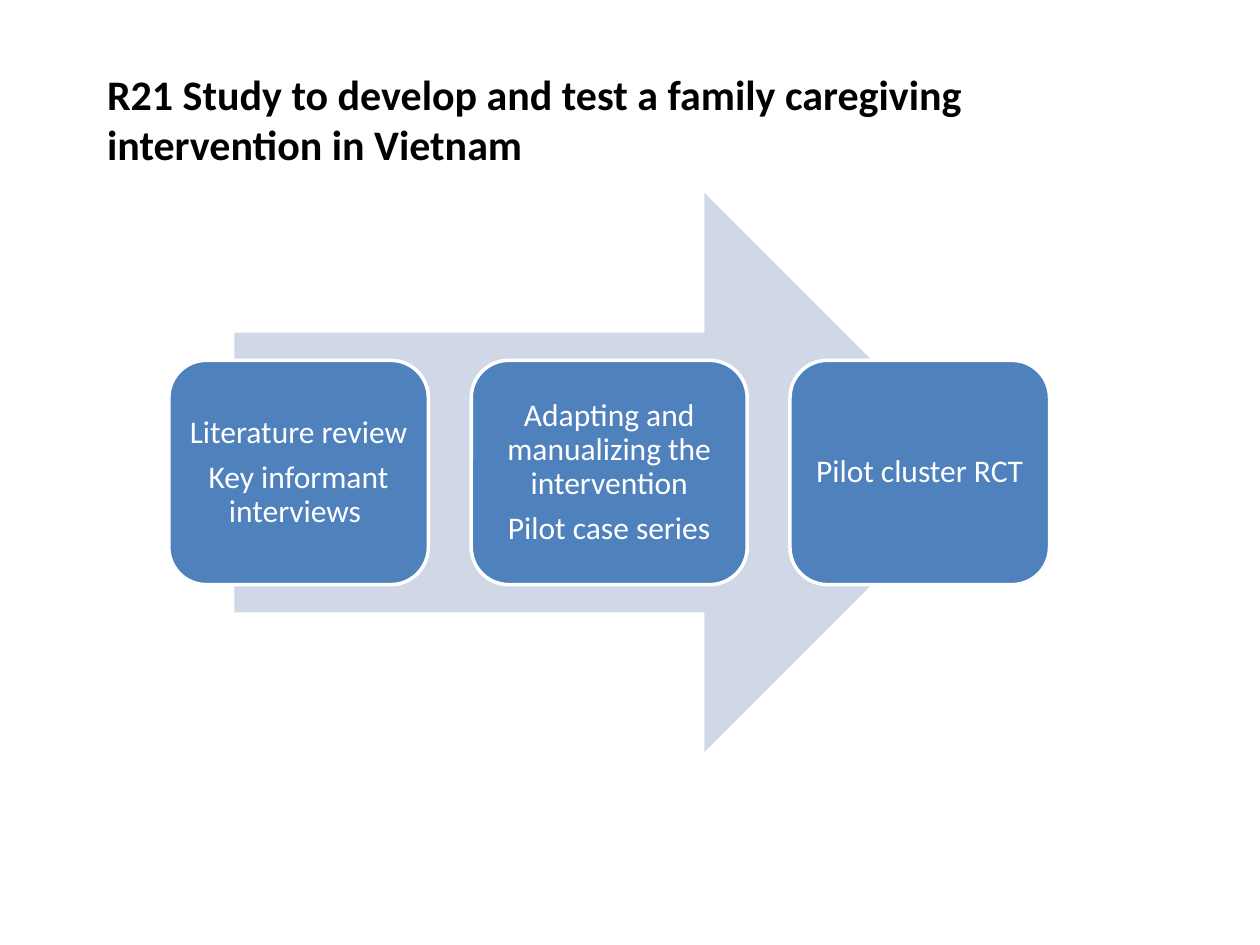
from dataclasses import dataclass

from pptx import Presentation
from pptx.dml.color import RGBColor
from pptx.enum.shapes import MSO_SHAPE
from pptx.enum.text import MSO_ANCHOR, PP_ALIGN
from pptx.util import Inches, Pt

BLACK = RGBColor(0x00, 0x00, 0x00)
WHITE = RGBColor(0xFF, 0xFF, 0xFF)
BLUE = RGBColor(0x4F, 0x81, 0xBD)
PALE_BLUE = RGBColor(0xD0, 0xD8, 0xE8)
FONT = "Calibri"

SLIDE_W, SLIDE_H = Inches(10), Inches(7.5)

# Step row, in percent of the slide's width and height
ROW_LEFT, ROW_TOP, ROW_HEIGHT, GAP = 13.4, 38.13, 23.73, 3.4


@dataclass
class Step:
    width: float
    lines: list[str]


STEPS = [
    Step(20.6, ["Literature review", "Key informant interviews "]),
    Step(21.9, ["Adapting and manualizing the intervention", "Pilot case series"]),
    Step(20.6, ["Pilot cluster RCT"]),
]


def area(left: float, top: float, width: float, height: float) -> tuple:
    """Turn percentages of the slide into a position and size."""
    return (int(SLIDE_W * left / 100), int(SLIDE_H * top / 100),
            int(SLIDE_W * width / 100), int(SLIDE_H * height / 100))


def format_font(font, size: float, color: RGBColor, bold: bool = False) -> None:
    font.name, font.size, font.bold = FONT, Pt(size), bold
    font.color.rgb = color


def add_title(s, text: str) -> None:
    title = s.shapes.title
    title.left, title.top, title.width, title.height = area(7.5, 6.53, 85, 12.13)
    tf = title.text_frame
    tf.text = text
    tf.word_wrap = True
    tf.vertical_anchor = MSO_ANCHOR.TOP
    p = tf.paragraphs[0]
    p.alignment = PP_ALIGN.LEFT
    format_font(p.runs[0].font, 24, BLACK, bold=True)


def add_arrow(s) -> None:
    sp = s.shapes.add_shape(MSO_SHAPE.RIGHT_ARROW, *area(18.6, 20.4, 59.5, 59.2))
    sp.shadow.inherit = False
    sp.fill.solid()
    sp.fill.fore_color.rgb = PALE_BLUE
    sp.line.fill.background()


def add_step(s, step: Step, left: float) -> None:
    sp = s.shapes.add_shape(MSO_SHAPE.ROUNDED_RECTANGLE,
                            *area(left, ROW_TOP, step.width, ROW_HEIGHT))
    sp.shadow.inherit = False
    sp.fill.solid()
    sp.fill.fore_color.rgb = BLUE
    sp.line.color.rgb = WHITE
    sp.line.width = Pt(2)

    tf = sp.text_frame
    tf.text = "\n".join(step.lines)
    tf.word_wrap = True
    tf.vertical_anchor = MSO_ANCHOR.MIDDLE
    tf.margin_left = tf.margin_right = Inches(0.07)
    tf.margin_top = tf.margin_bottom = Inches(0.07)
    for p in tf.paragraphs:
        p.alignment = PP_ALIGN.CENTER
        p.line_spacing = 0.9
        p.space_after = Pt(6.3)
        format_font(p.runs[0].font, 18, WHITE)


def main() -> None:
    prs = Presentation()
    prs.slide_width, prs.slide_height = SLIDE_W, SLIDE_H
    s = prs.slides.add_slide(prs.slide_layouts[5])

    add_title(s, "R21 Study to develop and test a family caregiving "
                 "intervention in Vietnam")

    # Process arrow with its steps from left to right
    add_arrow(s)
    left = ROW_LEFT
    for step in STEPS:
        add_step(s, step, left)
        left += step.width + GAP

    prs.save("out.pptx")


if __name__ == "__main__":
    main()
